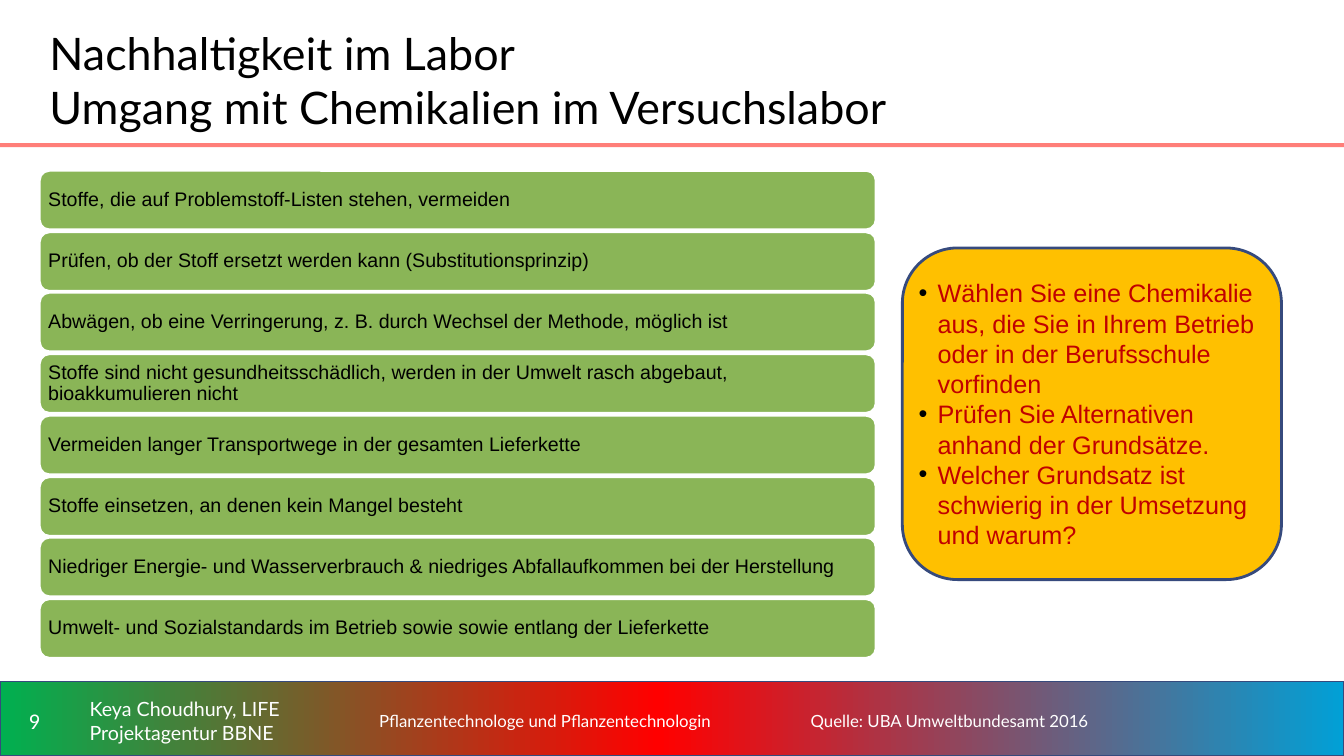
"""Build the slide on handling chemicals in the laboratory."""
import copy

import pptx
import pptx.dml.color
import pptx.enum.shapes
import pptx.enum.text
import pptx.oxml
import pptx.oxml.ns
import pptx.util

RGB = pptx.dml.color.RGBColor
BLACK = RGB(0x00, 0x00, 0x00)
WHITE = RGB(0xFF, 0xFF, 0xFF)
NAVY = RGB(0x36, 0x4A, 0x7D)
ROSE = RGB(0xFF, 0x7E, 0x79)
AMBER = RGB(0xFF, 0xC0, 0x00)
CRIMSON = RGB(0xC0, 0x00, 0x00)
LEAF = RGB(0x4E, 0x8F, 0x00)
BLEND = [(0, RGB(0x00, 0xB0, 0x50)), (0.49, RGB(0xFF, 0x00, 0x00)),
         (1, RGB(0x01, 0xA0, 0xD6))]
PX = 9144
NS = pptx.oxml.ns.nsdecls("a")
KIND = pptx.enum.shapes.MSO_SHAPE
ALIGN = pptx.enum.text.PP_ALIGN

RULES = [
    "Stoffe, die auf Problemstoff-Listen stehen, vermeiden",
    "Prüfen, ob der Stoff ersetzt werden kann (Substitutionsprinzip)",
    "Abwägen, ob eine Verringerung, z. B. durch Wechsel der Methode, möglich ist",
    "Stoffe sind nicht gesundheitsschädlich, werden in der Umwelt rasch abgebaut, "
    "bioakkumulieren nicht",
    "Vermeiden langer Transportwege in der gesamten Lieferkette",
    "Stoffe einsetzen, an denen kein Mangel besteht",
    "Niedriger Energie- und Wasserverbrauch & niedriges Abfallaufkommen bei der Herstellung",
    "Umwelt- und Sozialstandards im Betrieb sowie sowie entlang der Lieferkette",
]
TASKS = [
    "Wählen Sie eine Chemikalie aus, die Sie in Ihrem Betrieb oder in der "
    "Berufsschule vorfinden",
    "Prüfen Sie Alternativen anhand der Grundsätze.",
    "Welcher Grundsatz ist schwierig in der Umsetzung und warum?",
]


def add_box(kind, left, top, width, height, ink=None, weight=1):
    """Add a flat preset shape with an optional outline."""
    box = slide.shapes.add_shape(kind, left * PX, top * PX, width * PX, height * PX)
    box.shadow.inherit = False
    if ink is None:
        box.line.fill.background()
    else:
        box.line.color.rgb = ink
        box.line.width = pptx.util.Pt(weight)
    return box


def set_text(shape, lines, font, size, color, pad=(10, 5), align=ALIGN.LEFT,
             space=1.0, bullet=False):
    """Fill a shape with evenly formatted paragraphs."""
    frame = shape.text_frame
    frame.text = "\n".join(lines)
    frame.word_wrap = True
    frame.auto_size = pptx.enum.text.MSO_AUTO_SIZE.NONE
    frame.vertical_anchor = pptx.enum.text.MSO_ANCHOR.MIDDLE
    frame.margin_left = frame.margin_right = pad[0] * PX
    frame.margin_top = frame.margin_bottom = pad[1] * PX
    for para in frame.paragraphs:
        props = para._p.get_or_add_pPr()
        indent = 19 * PX if bullet else 0
        props.set("marL", str(indent))
        props.set("indent", str(-indent))
        if bullet:
            marks = [f'<a:buClr {NS}><a:srgbClr val="{BLACK}"/></a:buClr>',
                     f'<a:buFont {NS} typeface="Arial"/>',
                     f'<a:buChar {NS} char="•"/>']
        else:
            marks = [f"<a:buNone {NS}/>"]
        for mark in marks:
            props.append(pptx.oxml.parse_xml(mark))
        para.alignment = align
        para.line_spacing = space
        para.space_before = pptx.util.Pt(0)
        para.font.name = font
        para.font.size = pptx.util.Pt(size)
        para.font.color.rgb = color


deck = pptx.Presentation()
deck.slide_width = 1333 * PX
deck.slide_height = 750 * PX
slide = deck.slides.add_slide(deck.slide_layouts[3])
title, course, source = slide.placeholders

band = add_box(KIND.RECTANGLE, 0, 676, 1333, 74, NAVY)
band.fill.gradient()
band.fill.gradient_angle = 0
stops = band._element.spPr.find(".//" + pptx.oxml.ns.qn("a:gsLst"))
stops.append(copy.deepcopy(stops[0]))
for stop, (place, color) in zip(band.fill.gradient_stops, BLEND):
    stop.position = place
    stop.color.rgb = color

rule = add_box(KIND.RECTANGLE, 0, 142, 1333, 4)
rule.fill.solid()
rule.fill.fore_color.rgb = ROSE

tree = slide.shapes._spTree
for back in (rule, band):
    tree.insert(2, back._element)

number = slide.shapes.add_textbox(0, 684 * PX, 68 * PX, 61 * PX)
set_text(number, ["9"], "Calibri", 16, WHITE, align=ALIGN.CENTER)

title.left, title.top, title.width, title.height = (
    n * PX for n in (39, 20, 984, 118))
set_text(title, ["Nachhaltigkeit im Labor\vUmgang mit Chemikalien im Versuchslabor"],
         "Lato", 32, BLACK)

for note, left, width, words in [
    (course, 366, 419, "Pflanzentechnologe und Pflanzentechnologin"),
    (source, 794, 505, "Quelle: UBA Umweltbundesamt 2016"),
]:
    note.left, note.top, note.width, note.height = (
        n * PX for n in (left, 684, width, 61))
    set_text(note, [words], "Lato", 12, WHITE, space=1.1)

task = add_box(KIND.ROUNDED_RECTANGLE, 895, 246, 376, 329, NAVY, 2)
task.fill.solid()
task.fill.fore_color.rgb = AMBER
set_text(task, TASKS, "Arial", 18, CRIMSON, pad=(0, 0), bullet=True)

for row, words in enumerate(RULES):
    bar = add_box(KIND.ROUNDED_RECTANGLE, 39, 169 + round(60.7 * row), 830, 59, WHITE, 2)
    bar.fill.solid()
    bar.fill.fore_color.rgb = LEAF
    tint = bar._element.spPr.find(".//" + pptx.oxml.ns.qn("a:srgbClr"))
    tint.append(pptx.oxml.parse_xml(f'<a:alpha {NS} val="66000"/>'))
    set_text(bar, [words], "Arial", 14, BLACK, pad=(6, 6), space=0.9)

author = slide.shapes.add_textbox(79 * PX, 684 * PX, 278 * PX, 62 * PX)
set_text(author, ["Keya Choudhury, LIFE", "Projektagentur BBNE"], "Lato", 14, WHITE)

deck.save("out.pptx")
